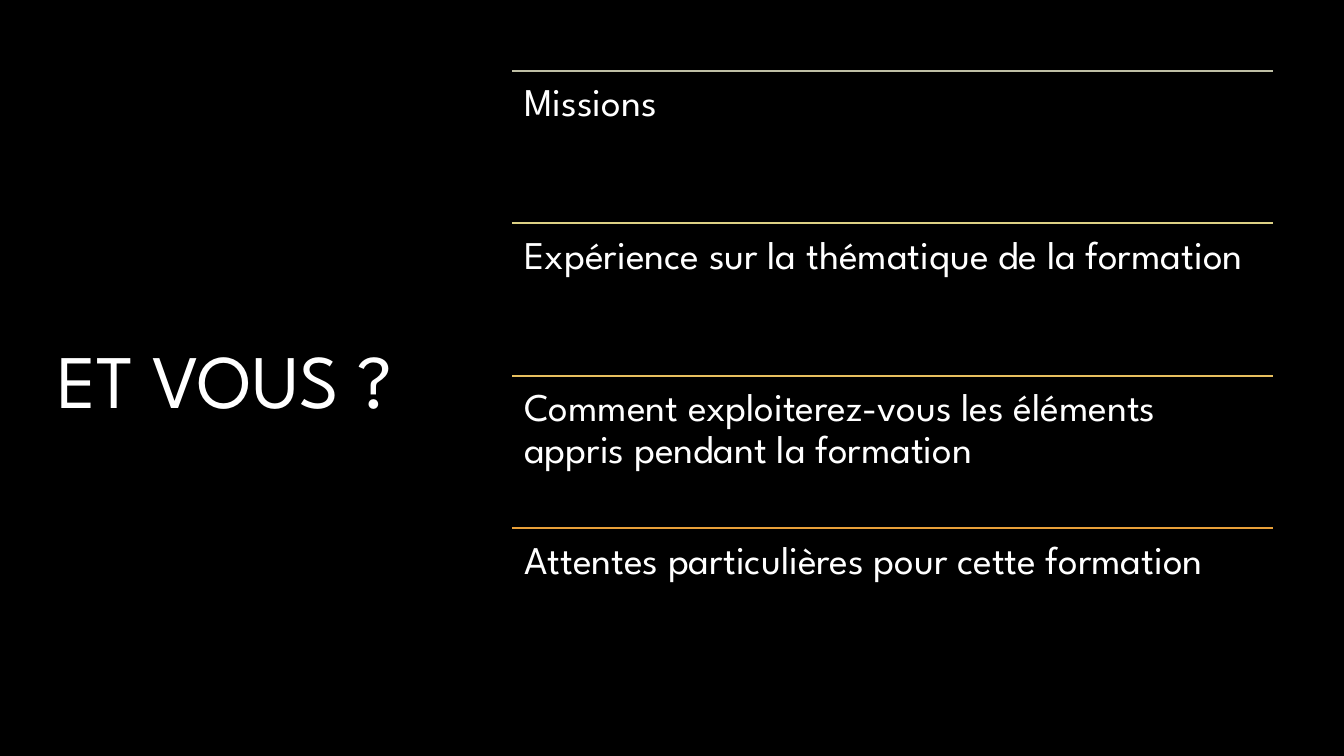
from lxml.etree import SubElement
from pptx import Presentation
from pptx.dml.color import RGBColor
from pptx.enum.shapes import MSO_CONNECTOR
from pptx.enum.text import MSO_ANCHOR
from pptx.oxml.ns import qn
from pptx.util import Inches, Pt

TOPICS = [
    ("Missions", "BFBFA5"),
    ("Expérience sur la thématique de la formation", "DCD084"),
    ("Comment exploiterez-vous les éléments appris pendant la formation", "E7BF5F"),
    ("Attentes particulières pour cette formation", "E9A039"),
]
LIST_LEFT, LIST_TOP, LIST_WIDTH = 5.08, 0.7, 7.55
ROW_HEIGHT = 1.513


def color(hex_string):
    return RGBColor.from_string(hex_string)


class SlideBuilder:
    font = "League Spartan"
    text_color = "FFFFFF"
    background = "000000"

    def __init__(self, deck):
        self.slide = deck.slides.add_slide(deck.slide_layouts[6])
        fill = self.slide.background.fill
        fill.solid()
        fill.fore_color.rgb = color(self.background)

    def text(self, wording, left, top, width, height, size, inset,
             anchor=MSO_ANCHOR.TOP, line_spacing=1.0):
        box = self.slide.shapes.add_textbox(
            Inches(left), Inches(top), Inches(width), Inches(height))
        frame = box.text_frame
        frame.word_wrap = True
        frame.vertical_anchor = anchor
        frame.margin_left = frame.margin_right = Inches(inset)
        frame.margin_top = frame.margin_bottom = Inches(inset)
        frame.text = wording
        para = frame.paragraphs[0]
        para.line_spacing = line_spacing
        span = para.runs[0]
        span.font.name = self.font
        span.font.size = Pt(size)
        span.font.color.rgb = color(self.text_color)

    def rule(self, left, top, width, line_color):
        connector = self.slide.shapes.add_connector(
            MSO_CONNECTOR.STRAIGHT, Inches(left), Inches(top),
            Inches(left + width), Inches(top))
        connector.line.color.rgb = color(line_color)
        connector.line.width = Pt(1.5)
        SubElement(connector._element.spPr, qn("a:effectLst"))


def main():
    deck = Presentation()
    deck.slide_width = Inches(13.33)
    deck.slide_height = Inches(7.5)
    builder = SlideBuilder(deck)
    builder.text("ET VOUS ?", 0.47, 0.7, 3.97, 6.11, 54, 0.1, MSO_ANCHOR.MIDDLE)
    for index, (topic, line_color) in enumerate(TOPICS):
        top = LIST_TOP + index * ROW_HEIGHT
        builder.rule(LIST_LEFT, top, LIST_WIDTH, line_color)
        builder.text(topic, LIST_LEFT, top, LIST_WIDTH, ROW_HEIGHT, 28, 0.12,
                     line_spacing=0.9)
    deck.save("out.pptx")


if __name__ == "__main__":
    main()
